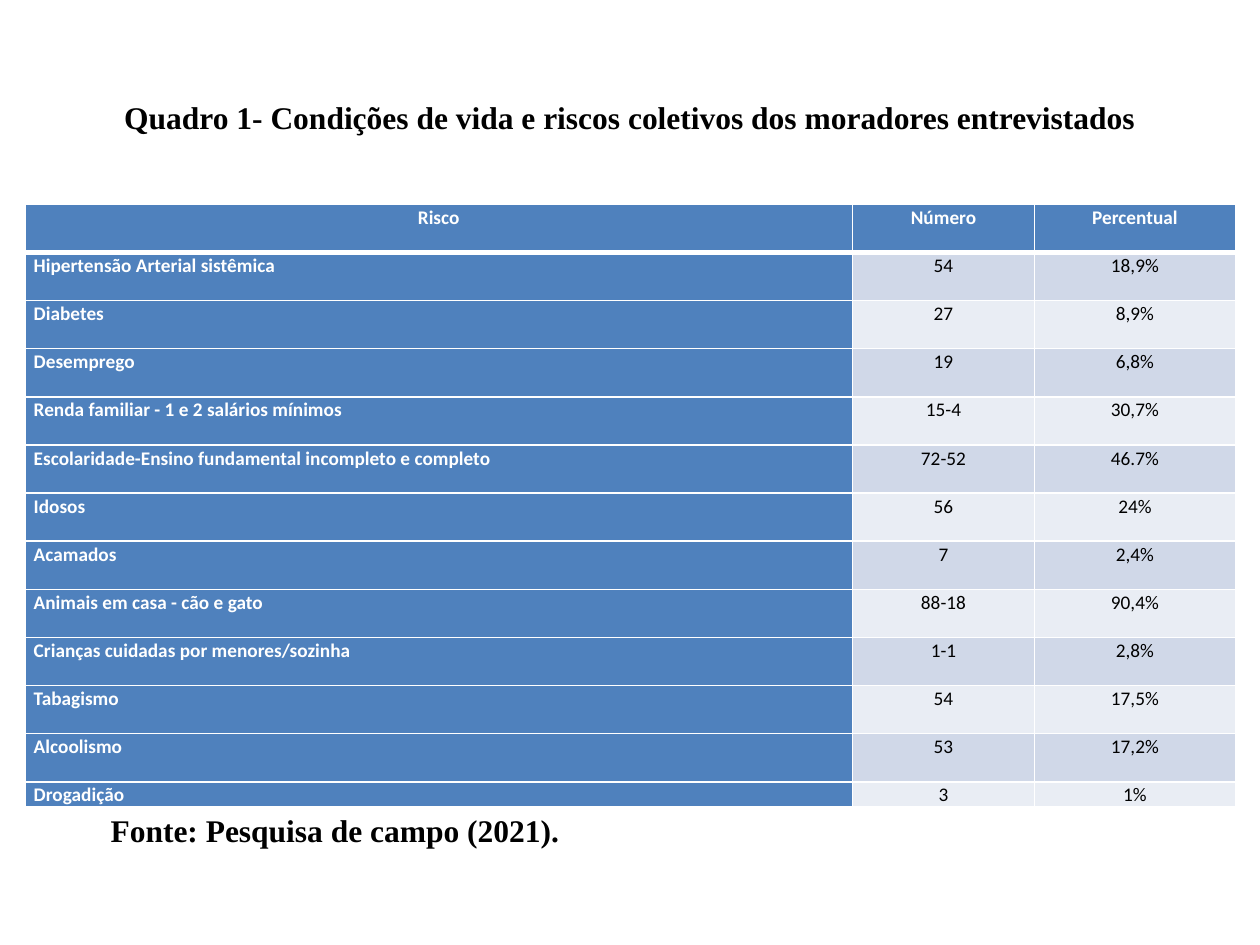
from lxml.etree import SubElement as Sub
from pptx import Presentation
from pptx.dml.color import RGBColor as RGB
from pptx.enum.text import MSO_ANCHOR as Anchor, PP_ALIGN as Align
from pptx.oxml.ns import qn
from pptx.util import Cm, Pt

HUES = {"ink": "000000", "paper": "FFFFFF", "head": "4F81BD", "odd": "D0D8E8", "even": "E9EDF4"}
WIDTHS = (16.69, 3.66, 4.06)
ROWS = [
    ("Risco", "Número", "Percentual"),
    ("Hipertensão Arterial sistêmica", "54", "18,9%"),
    ("Diabetes", "27", "8,9%"),
    ("Desemprego", "19", "6,8%"),
    ("Renda familiar - 1 e 2 salários mínimos", "15-4", "30,7%"),
    ("Escolaridade-Ensino fundamental incompleto e completo", "72-52", "46.7%"),
    ("Idosos", "56", "24%"),
    ("Acamados", "7", "2,4%"),
    ("Animais em casa - cão e gato", "88-18", "90,4%"),
    ("Crianças cuidadas por menores/sozinha", "1-1", "2,8%"),
    ("Tabagismo", "54", "17,5%"),
    ("Alcoolismo", "53", "17,2%"),
    ("Drogadição", "3", "1%"),
]


class Deck:
    """Holds the style and the current slide."""

    def __init__(self):
        self.prs = Presentation()
        self.prs.slide_width, self.prs.slide_height = Cm(25.4), Cm(19.05)
        self.slide = self.prs.slides.add_slide(self.prs.slide_layouts[6])

    def style(self, para, face, size, hue, bold):
        for run in para.runs:
            font = run.font
            font.name, font.size, font.bold = face, Pt(size), bold
            font.color.rgb = RGB.from_string(HUES[hue])

    def text(self, box, words, align=Align.LEFT, anchor=Anchor.TOP, indent=0):
        frame = self.slide.shapes.add_textbox(*map(Cm, box)).text_frame
        frame.word_wrap = True
        frame.vertical_anchor = anchor
        frame.text = words
        para = frame.paragraphs[0]
        para.alignment = align
        if indent:
            para._p.get_or_add_pPr().set("marL", str(Cm(indent)))
        self.style(para, "Times New Roman", 18, "ink", True)

    def border(self, cell, row):
        props = cell._tc.get_or_add_tcPr()
        thick = {"lnT": row == 1, "lnB": row == 0}
        for side in ("lnL", "lnR", "lnT", "lnB"):
            width = Pt(3 if thick.get(side) else 1)
            line = Sub(props, qn(f"a:{side}"), w=str(width))
            Sub(Sub(line, qn("a:solidFill")), qn("a:srgbClr"), val=HUES["paper"])

    def cell(self, cell, words, row, col):
        key = row == 0 or col == 0
        cell.margin_left = cell.margin_right = Cm(0.18)
        cell.margin_top = cell.margin_bottom = 0
        self.border(cell, row)
        cell.fill.solid()
        hue = "head" if key else ("even", "odd")[row % 2]
        cell.fill.fore_color.rgb = RGB.from_string(HUES[hue])
        cell.text_frame.text = words
        para = cell.text_frame.paragraphs[0]
        para.alignment = Align.LEFT if row and col == 0 else Align.CENTER
        para.line_spacing = 1.07
        self.style(para, "Calibri", 11, "paper" if key else "ink", key)

    def table(self, left, top, rows, widths, high, last):
        tall = high * (len(rows) - 1) + last
        size = map(Cm, (left, top, sum(widths), tall))
        grid = self.slide.shapes.add_table(len(rows), len(widths), *size).table
        grid.first_col = True
        for col, width in zip(grid.columns, widths):
            col.width = Cm(width)
        for r, row in enumerate(rows):
            grid.rows[r].height = Cm(last if r == len(rows) - 1 else high)
            for c, words in enumerate(row):
                self.cell(grid.cell(r, c), words, r, c)


def main():
    deck = Deck()
    deck.text((0, 0.76, 25.4, 3.18),
              "Quadro 1- Condições de vida e riscos coletivos dos moradores entrevistados",
              Align.CENTER, Anchor.MIDDLE)
    deck.table(0.5, 4.12, ROWS, WIDTHS, 0.97, 0.38)
    deck.text((0.71, 16.23, 11, 1.8), "Fonte: Pesquisa de campo (2021).", indent=1.27)
    deck.prs.save("out.pptx")


if __name__ == "__main__":
    main()
